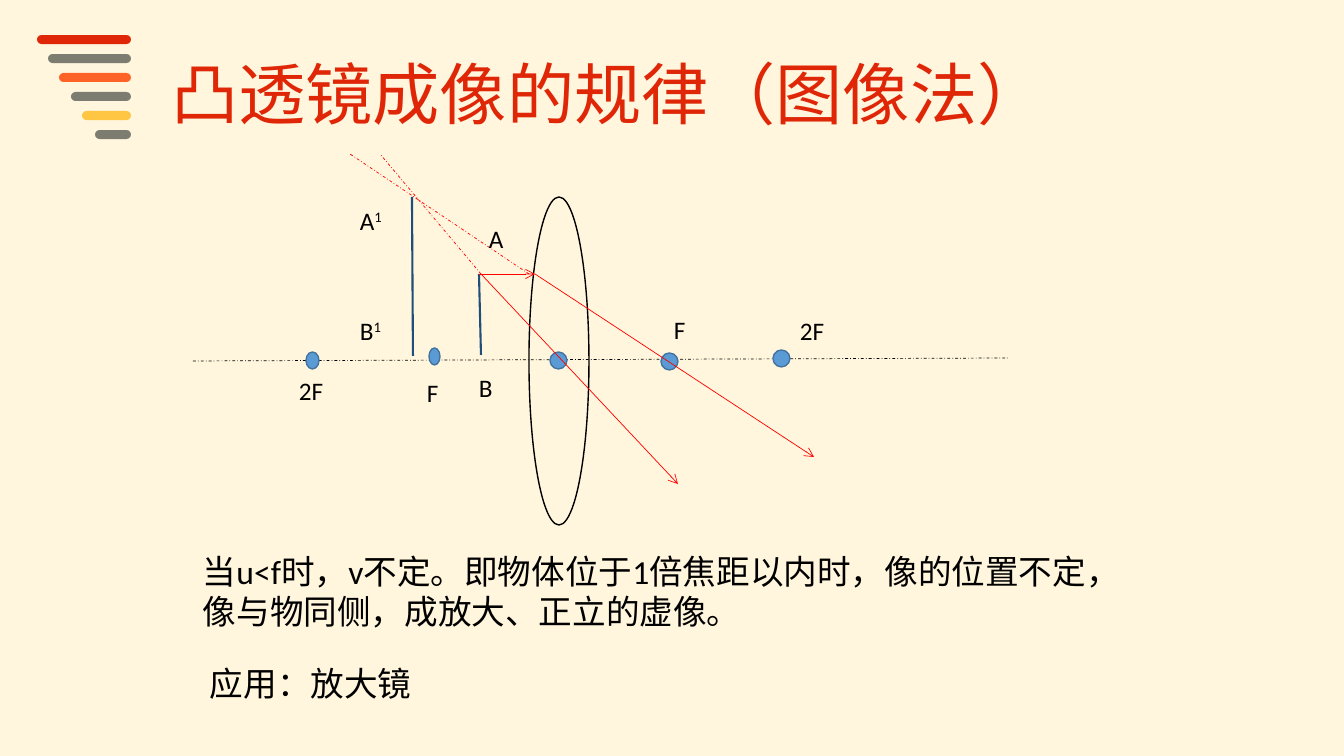
from dataclasses import dataclass

from lxml import etree
from pptx import Presentation
from pptx.dml.color import RGBColor
from pptx.enum.dml import MSO_LINE
from pptx.enum.shapes import MSO_CONNECTOR, MSO_SHAPE
from pptx.enum.text import MSO_ANCHOR, MSO_AUTO_SIZE, PP_ALIGN
from pptx.oxml.ns import qn
from pptx.util import Emu, Pt


@dataclass(frozen=True)
class Theme:
    background: str = "FFF6DD"
    red: str = "DF2708"
    grey: str = "7C7C70"
    orange: str = "FD6326"
    yellow: str = "FEC642"
    ink: str = "000000"
    ray: str = "FF0000"
    upright: str = "1F4E79"
    dot: str = "5B9BD5"
    dot_edge: str = "43739E"
    latin: str = "Calibri"
    heading: str = "Noto Sans CJK SC"
    title_size: int = 48
    body_size: int = 24
    label_size: int = 18


THEME = Theme()
EMU_PER_PX = 914400 / 100.8

TITLE = ("凸透镜成像的规律（图像法）", (161, 47, 911, 92))
NOTES = [
    ("当u<f时，v不定。即物体位于1倍焦距以内时，像的位置不定，像与物同侧，成放大、正立的虚像。",
     (193, 546, 966, 92)),
    ("应用：放大镜", (200, 658, 359, 50)),
]
# text, superscript, left, top, width
LABELS = [
    ("A", "", 479, 218, 26),
    ("B", "", 469, 367, 24),
    ("A", "1", 350, 200, 52),
    ("B", "1", 350, 310, 49),
    ("F", "", 417, 372, 36),
    ("F", "", 664, 309, 36),
    ("2F", "", 790, 310, 47),
    ("2F", "", 289, 370, 47),
]
LABEL_HEIGHT = 40

BAR_RIGHT, BAR_TOP, BAR_PITCH, BAR_HEIGHT = 131, 35, 19, 9
BARS = [(37, THEME.red), (48, THEME.grey), (59, THEME.orange),
        (71, THEME.grey), (82, THEME.yellow), (95, THEME.grey)]

LENS = (529, 197, 60, 328)
DOT_HEIGHT = 17
DOTS = [(306, 352, 13), (429, 348, 11), (550, 352, 17), (661, 353, 17), (773, 350, 17)]

AXIS = ((193, 361), (1008, 358))
UPRIGHTS = [((479, 274), (481, 355)), ((412, 197), (413, 356))]
RAYS = [((479, 274), (535, 274)), ((535, 274), (814, 457)), ((481, 274), (678, 484))]
EXTENSIONS = [((481, 274), (380, 154)), ((529, 274), (350, 154))]


def px(*lengths):
    return [Emu(round(length * EMU_PER_PX)) for length in lengths]


def rgb(color):
    return RGBColor.from_string(color)


def write(frame, text, size, color=THEME.ink, font=THEME.latin, east_asian=None, superscript=""):
    frame.word_wrap = True
    frame.auto_size = MSO_AUTO_SIZE.NONE
    frame.vertical_anchor = MSO_ANCHOR.TOP
    para = frame.paragraphs[0]
    para.alignment = PP_ALIGN.LEFT
    for part in filter(None, (text, superscript)):
        span = para.add_run()
        span.text = part
        span.font.size = Pt(size)
        span.font.name = font
        span.font.color.rgb = rgb(color)
    if superscript:
        span.font._element.set("baseline", "30000")
    if east_asian:
        etree.SubElement(span.font._element, qn("a:ea")).set("typeface", east_asian)


def add_figure(slide, kind, bounds, fill=None, line=None):
    figure = slide.shapes.add_shape(kind, *px(*bounds))
    figure.shadow.inherit = False
    if fill:
        figure.fill.solid()
        figure.fill.fore_color.rgb = rgb(fill)
    else:
        figure.fill.background()
    if line:
        figure.line.color.rgb = rgb(line)
        figure.line.width = Pt(1)
    else:
        figure.line.fill.background()
    return figure


def add_line(slide, ends, color, width=0.5, dashed=False, arrow=False):
    start, end = ends
    connector = slide.shapes.add_connector(MSO_CONNECTOR.STRAIGHT, *px(*start, *end))
    connector.line.color.rgb = rgb(color)
    connector.line.width = Pt(width)
    if dashed:
        connector.line.dash_style = MSO_LINE.DASH_DOT
    if arrow:
        etree.SubElement(connector.line._get_or_add_ln(), qn("a:tailEnd")).set("type", "arrow")
    etree.SubElement(connector._element.spPr, qn("a:effectLst"))


def add_title(slide):
    text, bounds = TITLE
    title = slide.shapes.title
    title.left, title.top, title.width, title.height = px(*bounds)
    write(title.text_frame, text, THEME.title_size, color=THEME.red,
          font=THEME.heading, east_asian=THEME.heading)


def add_bars(slide):
    for row, (left, color) in enumerate(BARS):
        bounds = (left, BAR_TOP + row * BAR_PITCH, BAR_RIGHT - left, BAR_HEIGHT)
        bar = add_figure(slide, MSO_SHAPE.ROUNDED_RECTANGLE, bounds, fill=color)
        bar.adjustments[0] = 0.5


def add_diagram(slide):
    add_line(slide, AXIS, THEME.ink, dashed=True)
    add_figure(slide, MSO_SHAPE.OVAL, LENS, line=THEME.ink)
    for ends in UPRIGHTS:
        add_line(slide, ends, THEME.upright, width=1.5)
    for left, top, width in DOTS:
        add_figure(slide, MSO_SHAPE.OVAL, (left, top, width, DOT_HEIGHT),
                   fill=THEME.dot, line=THEME.dot_edge)
    for ends in RAYS:
        add_line(slide, ends, THEME.ray, arrow=True)
    for ends in EXTENSIONS:
        add_line(slide, ends, THEME.ray, dashed=True)


def add_texts(slide):
    for text, superscript, left, top, width in LABELS:
        box = slide.shapes.add_textbox(*px(left, top, width, LABEL_HEIGHT))
        write(box.text_frame, text, THEME.label_size, superscript=superscript)
    for text, bounds in NOTES:
        box = slide.shapes.add_textbox(*px(*bounds))
        write(box.text_frame, text, THEME.body_size)


def main():
    deck = Presentation()
    deck.slide_width, deck.slide_height = px(1344, 756)
    slide = deck.slides.add_slide(deck.slide_layouts[5])
    slide.background.fill.solid()
    slide.background.fill.fore_color.rgb = rgb(THEME.background)
    add_bars(slide)
    add_title(slide)
    add_diagram(slide)
    add_texts(slide)
    deck.save("out.pptx")


if __name__ == "__main__":
    main()
